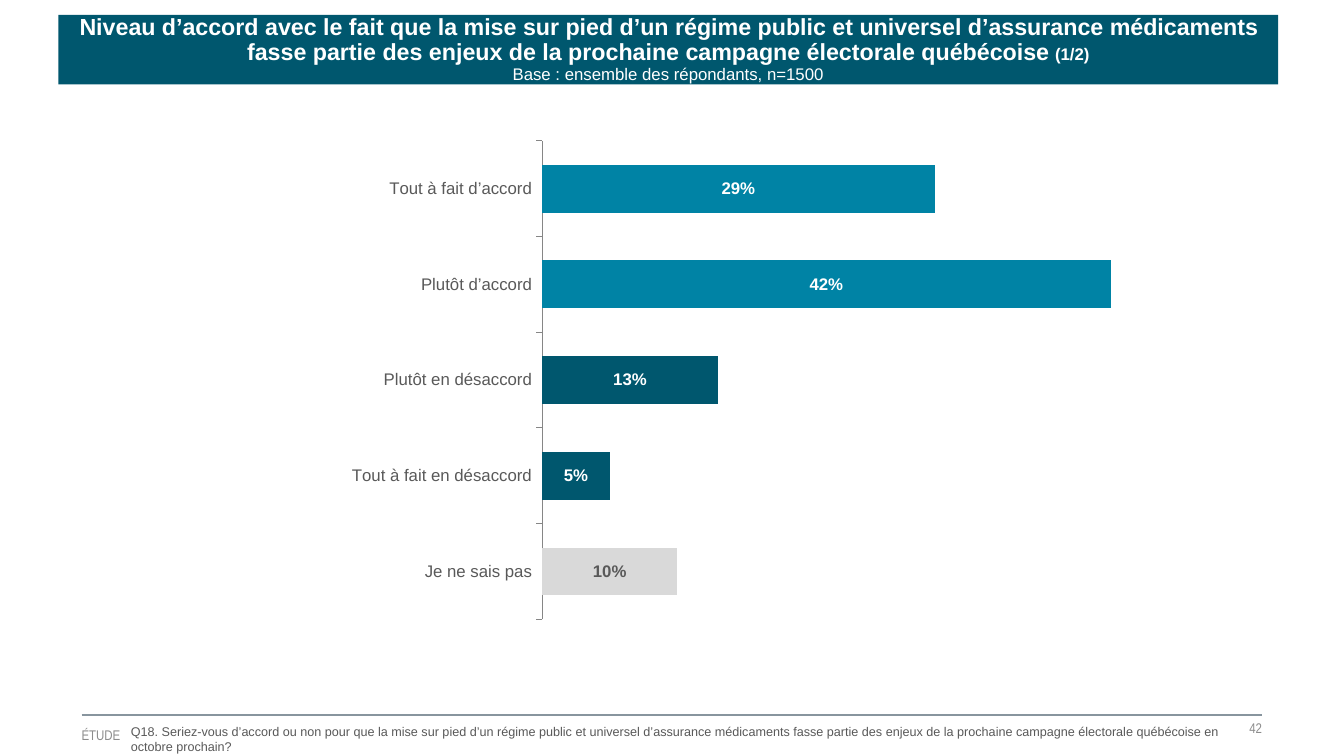
from dataclasses import dataclass

from lxml.etree import SubElement
from pptx import Presentation
from pptx.chart.data import CategoryChartData
from pptx.dml.color import RGBColor
from pptx.enum.chart import XL_CHART_TYPE as ChartType
from pptx.enum.chart import XL_LABEL_POSITION as LabelPosition
from pptx.enum.chart import XL_TICK_LABEL_POSITION as TickLabels
from pptx.enum.chart import XL_TICK_MARK as TickMark
from pptx.enum.shapes import MSO_CONNECTOR as Connector
from pptx.enum.shapes import MSO_SHAPE as Shape
from pptx.enum.text import MSO_ANCHOR as Anchor
from pptx.enum.text import PP_ALIGN as Align
from pptx.oxml.ns import qn
from pptx.util import Pt


@dataclass(frozen=True)
class Theme:
    dark_teal: str = "00576E"
    teal: str = "0083A5"
    light_gray: str = "D9D9D9"
    text_gray: str = "595959"
    footer_gray: str = "8C8C8C"
    axis_gray: str = "868686"
    rule_gray: str = "88959E"
    white: str = "FFFFFF"
    body_font: str = "Arial"
    footer_font: str = "Arial Narrow"
    title_size: float = 16.6
    body_size: float = 12
    footer_size: float = 10
    question_size: float = 9


THEME = Theme()
FOOTER = {"name": THEME.footer_font, "size": THEME.footer_size, "color": THEME.footer_gray}
QUESTION = {"name": THEME.body_font, "size": THEME.question_size, "color": THEME.text_gray}
LABEL = {"name": THEME.body_font, "size": THEME.body_size, "color": THEME.text_gray}
BASE = {**LABEL, "color": THEME.white, "bold": False}
BOLD_WHITE = {**BASE, "bold": True}
TITLE = {**BOLD_WHITE, "size": THEME.title_size}

# Answer, share, bar colour, label format
ANSWERS = [
    ("Tout à fait d’accord", 0.29, THEME.teal, BOLD_WHITE),
    ("Plutôt d’accord", 0.42, THEME.teal, BOLD_WHITE),
    ("Plutôt en désaccord", 0.13, THEME.dark_teal, BOLD_WHITE),
    ("Tout à fait en désaccord", 0.05, THEME.dark_teal, BOLD_WHITE),
    ("Je ne sais pas", 0.10, THEME.light_gray, {**LABEL, "bold": True}),
]
HEADING = [
    [("Niveau d’accord avec le fait que la mise sur pied d’un régime public et universel "
      "d’assurance médicaments fasse partie des enjeux de la prochaine campagne électorale "
      "québécoise ", TITLE), ("(1/2)", BOLD_WHITE)],
    [("Base : ensemble des répondants, n=1500", BASE)],
]
QUESTION_TEXT = (
    "Q18. Seriez-vous d’accord ou non pour que la mise sur pied d’un régime public et "
    "universel d’assurance médicaments fasse partie des enjeux de la prochaine campagne "
    "électorale québécoise en octobre prochain?"
)


def set_font(font, style):
    for key, value in style.items():
        if key == "color":
            font.color.rgb = RGBColor.from_string(value)
        else:
            setattr(font, key, Pt(value) if key == "size" else value)


def paint(fill, color):
    fill.solid()
    fill.fore_color.rgb = RGBColor.from_string(color)


def write(frame, paragraphs, align=Align.LEFT, spacing=None):
    """Fill a text frame with paragraphs, each a list of (text, style) runs."""
    frame.word_wrap = True
    for index, runs in enumerate(paragraphs):
        paragraph = frame.add_paragraph() if index else frame.paragraphs[0]
        paragraph.alignment = align
        paragraph.line_spacing = spacing
        for text, style in runs:
            run = paragraph.add_run()
            run.text = text
            set_font(run.font, style)


def center_without_margins(frame):
    frame.vertical_anchor = Anchor.MIDDLE
    for side in ("left", "top", "right", "bottom"):
        setattr(frame, f"margin_{side}", 0)


def add_text(slide, box, text, style, align=Align.LEFT, tight=True):
    frame = slide.shapes.add_textbox(*map(Pt, box)).text_frame
    if tight:
        center_without_margins(frame)
    write(frame, [[(text, style)]], align)


def add_banner(slide, box, paragraphs):
    banner = slide.shapes.add_shape(Shape.RECTANGLE, *map(Pt, box))
    banner.shadow.inherit = False
    paint(banner.fill, THEME.dark_teal)
    banner.line.fill.background()
    center_without_margins(banner.text_frame)
    write(banner.text_frame, paragraphs, Align.CENTER, 0.9)


def add_rule(slide, left, right, top):
    rule = slide.shapes.add_connector(Connector.STRAIGHT, Pt(left), Pt(top), Pt(right), Pt(top))
    rule.line.width = Pt(1.5)
    rule.line.color.rgb = RGBColor.from_string(THEME.rule_gray)
    SubElement(rule._element.spPr, qn("a:effectLst"))


def place_plot(chart, x, y, w, h):
    """Fix the inner plot area, in fractions of the chart."""
    plot_area = chart._chartSpace.chart.plotArea
    for old in plot_area.findall(qn("c:layout")):
        plot_area.remove(old)
    layout = SubElement(plot_area, qn("c:layout"))
    plot_area.insert(0, layout)
    manual = SubElement(layout, qn("c:manualLayout"))
    settings = {"layoutTarget": "inner", "xMode": "edge", "yMode": "edge",
                "x": x, "y": y, "w": w, "h": h}
    for tag, value in settings.items():
        SubElement(manual, qn(f"c:{tag}")).set("val", str(value))


def format_axes(chart):
    categories, values = chart.category_axis, chart.value_axis
    formats = {"reverse_order": True, "major_tick_mark": TickMark.OUTSIDE,
               "minor_tick_mark": TickMark.NONE, "has_major_gridlines": False,
               "tick_label_position": TickLabels.NEXT_TO_AXIS}
    for key, value in formats.items():
        setattr(categories, key, value)
    set_font(categories.tick_labels.font, LABEL)
    categories.format.line.width = Pt(0.75)
    categories.format.line.color.rgb = RGBColor.from_string(THEME.axis_gray)
    scale = {"minimum_scale": 0, "maximum_scale": 0.45,
             "has_major_gridlines": False, "visible": False}
    for key, value in scale.items():
        setattr(values, key, value)


def add_answer_chart(slide, box):
    data = CategoryChartData(number_format="0%")
    data.categories = [answer for answer, *_ in ANSWERS]
    data.add_series("Series 1", [share for _, share, *_ in ANSWERS])
    chart = slide.shapes.add_chart(ChartType.BAR_CLUSTERED, *map(Pt, box), data).chart
    chart.has_legend = False
    chart.has_title = False
    set_font(chart.font, LABEL)
    place_plot(chart, 0.349, 0.028, 0.551, 0.908)
    format_axes(chart)

    plot = chart.plots[0]
    plot.gap_width = 100
    plot.vary_by_categories = False
    series = plot.series[0]
    paint(series.format.fill, THEME.dark_teal)
    labels = series.data_labels
    formats = {"show_value": True, "position": LabelPosition.CENTER,
               "number_format": "0%", "number_format_is_linked": False}
    for key, value in formats.items():
        setattr(labels, key, value)
    set_font(labels.font, BOLD_WHITE)
    for index, (_, _, color, style) in enumerate(ANSWERS):
        point = series.points[index]
        if color != THEME.dark_teal:
            paint(point.format.fill, color)
        if style is not BOLD_WHITE:
            set_font(point.data_label.font, style)
            point.data_label.position = LabelPosition.CENTER


def main():
    presentation = Presentation()
    presentation.slide_width, presentation.slide_height = Pt(960), Pt(540)
    slide = presentation.slides.add_slide(presentation.slide_layouts[6])
    add_rule(slide, 58.3, 901.4, 510.5)
    add_text(slide, (628.5, 510.5, 272.9, 18.7), "42", FOOTER, Align.RIGHT)
    add_text(slide, (58.3, 515.5, 268.6, 18.7), "ÉTUDE", FOOTER)
    add_text(slide, (86.4, 513.4, 813.6, 28.8), QUESTION_TEXT, QUESTION, tight=False)
    add_answer_chart(slide, (111.6, 90, 789.8, 376.6))
    add_banner(slide, (41.8, 10.6, 871.2, 49.7), HEADING)
    presentation.save("out.pptx")


if __name__ == "__main__":
    main()
